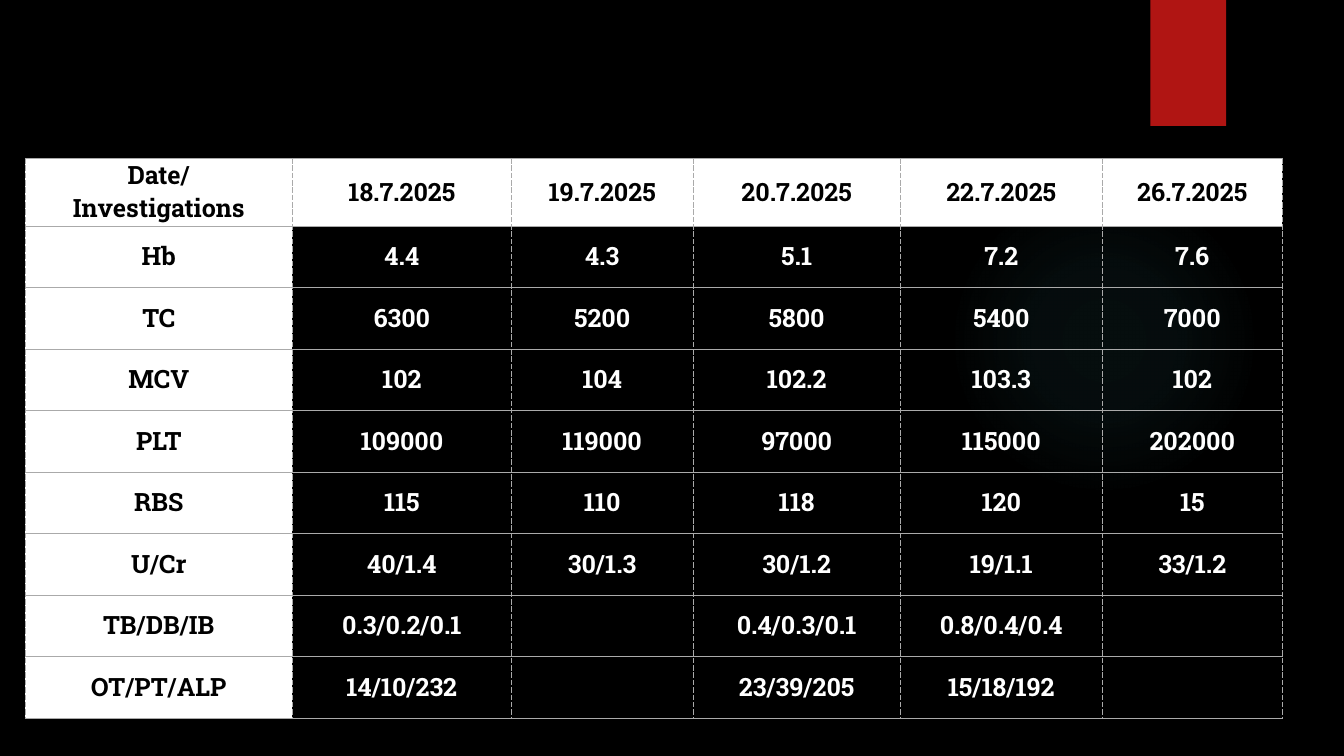
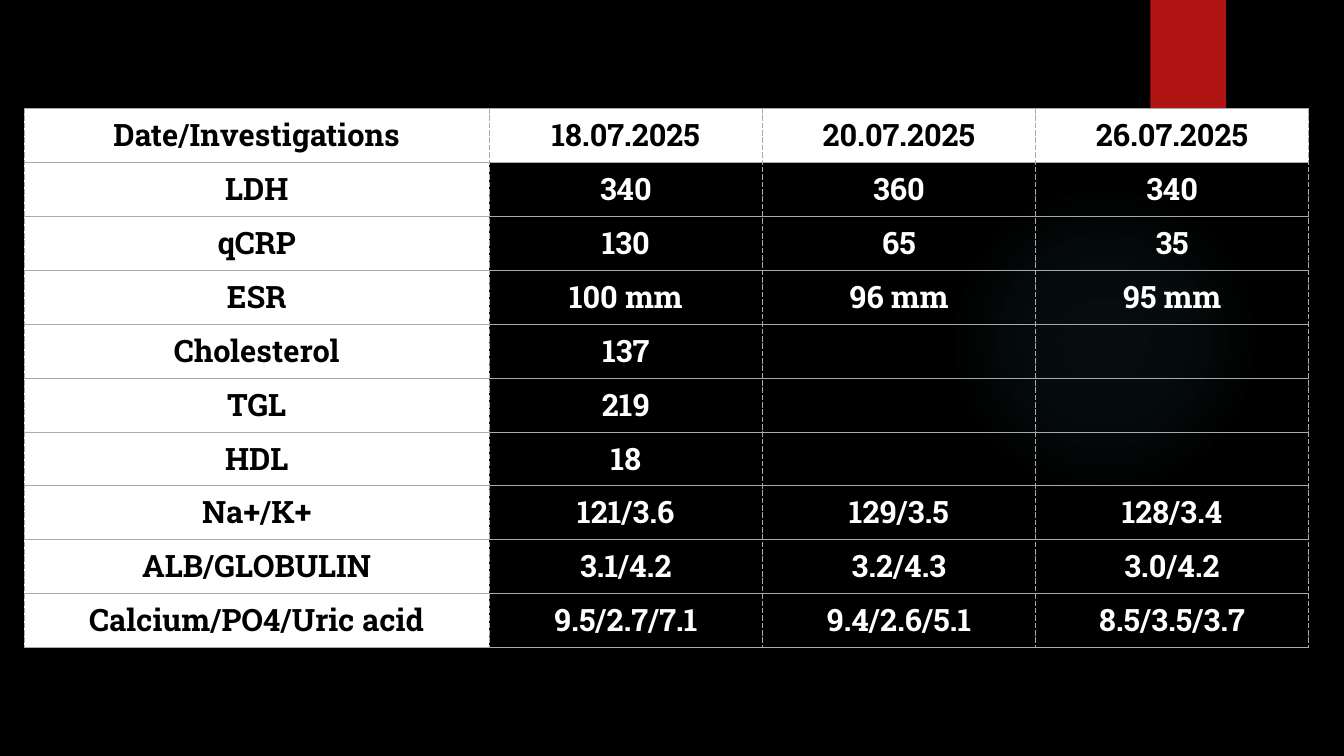
"""Build two slides of dated laboratory investigations."""
from pptx import Presentation
from pptx.dml.color import RGBColor
from pptx.enum.shapes import MSO_SHAPE
from pptx.enum.text import MSO_ANCHOR, PP_ALIGN
from pptx.oxml import parse_xml
from pptx.oxml.ns import nsdecls, qn
from pptx.util import Inches, Pt

FONT = "Roboto Slab"
BLACK, WHITE, RED, TEAL, GREY = "000000", "FFFFFF", "B01513", "50B9C1", "AAAAAA"
GLOW_STOPS = [(0, 7), (36, 6), (69, 0)]
BORDERS = [("lnL", "dash"), ("lnR", "dash"), ("lnT", "solid"), ("lnB", "solid")]

INVESTIGATIONS = [
    {
        "place": (0.5, 3.14),
        "size": 36,
        "columns": [5.3, 4.35, 3.6, 4.12, 4, 3.58],
        "heights": [1.24] + [1.22] * 8,
        "rows": [
            ["Date/\nInvestigations", "18.7.2025", "19.7.2025", "20.7.2025", "22.7.2025", "26.7.2025"],
            ["Hb", "4.4", "4.3", "5.1", "7.2", "7.6"],
            ["TC", "6300", "5200", "5800", "5400", "7000"],
            ["MCV", "102", "104", "102.2", "103.3", "102"],
            ["PLT", "109000", "119000", "97000", "115000", "202000"],
            ["RBS", "115", "110", "118", "120", "15"],
            ["U/Cr", "40/1.4", "30/1.3", "30/1.2", "19/1.1", "33/1.2"],
            ["TB/DB/IB", "0.3/0.2/0.1", "", "0.4/0.3/0.1", "0.8/0.4/0.4", ""],
            ["OT/PT/ALP", "14/10/232", "", "23/39/205", "15/18/192", ""],
        ],
    },
    {
        "place": (0.48, 2.15),
        "size": 44,
        "columns": [9.23] + [5.42] * 3,
        "heights": [1.07] * 10,
        "rows": [
            ["Date/Investigations", "18.07.2025", "20.07.2025", "26.07.2025"],
            ["LDH", "340", "360", "340"],
            ["qCRP", "130", "65", "35"],
            ["ESR", "100 mm", "96 mm", "95 mm"],
            ["Cholesterol", "137", "", ""],
            ["TGL", "219", "", ""],
            ["HDL", "18", "", ""],
            ["Na+/K+", "121/3.6", "129/3.5", "128/3.4"],
            ["ALB/GLOBULIN", "3.1/4.2", "3.2/4.3", "3.0/4.2"],
            ["Calcium/PO4/Uric acid", "9.5/2.7/7.1", "9.4/2.6/5.1", "8.5/3.5/3.7"],
        ],
    },
]


def paint(fill, colour):
    fill.solid()
    fill.fore_color.rgb = RGBColor.from_string(colour)


def add_decoration(slide):
    glow = slide.shapes.add_shape(
        MSO_SHAPE.OVAL, Inches(18.83), Inches(3.67), Inches(6.17), Inches(6.17))
    glow.fill.background()
    glow.line.fill.background()
    glow.shadow.inherit = False
    stops = "".join(
        f'<a:gs pos="{position * 1000}"><a:srgbClr val="{TEAL}">'
        f'<a:alpha val="{alpha * 1000}"/></a:srgbClr></a:gs>'
        for position, alpha in GLOW_STOPS)
    glow_properties = glow.element.spPr
    glow_properties.replace(glow_properties.find(qn("a:noFill")), parse_xml(
        f'<a:gradFill {nsdecls("a")}><a:gsLst>{stops}</a:gsLst><a:path path="circle">'
        '<a:fillToRect l="50000" t="50000" r="50000" b="50000"/></a:path></a:gradFill>'))

    ribbon = slide.shapes.add_shape(
        MSO_SHAPE.RECTANGLE, Inches(22.83), 0, Inches(1.5), Inches(2.5))
    paint(ribbon.fill, RED)
    ribbon.line.fill.background()
    ribbon.shadow.inherit = False
    ribbon.element.spPr.find(qn("a:effectLst")).append(parse_xml(
        f'<a:outerShdw {nsdecls("a")} blurRad="{Pt(3)}" dist="{Pt(2)}" dir="5400000" '
        f'rotWithShape="0"><a:srgbClr val="{BLACK}"><a:alpha val="45000"/></a:srgbClr></a:outerShdw>'))


prs = Presentation()
prs.slide_width = Inches(26.67)
prs.slide_height = Inches(15)
paint(prs.slide_master.background.fill, BLACK)

for results in INVESTIGATIONS:
    slide = prs.slides.add_slide(prs.slide_layouts[6])
    add_decoration(slide)
    left, top = results["place"]
    columns, heights, rows = results["columns"], results["heights"], results["rows"]
    table = slide.shapes.add_table(
        len(rows), len(columns), Inches(left), Inches(top),
        Inches(sum(columns)), Inches(sum(heights))).table
    table.first_row = False
    table.horz_banding = False
    for column, width in zip(table.columns, columns):
        column.width = Inches(width)

    for r, values in enumerate(rows):
        table.rows[r].height = Inches(heights[r])
        for c, value in enumerate(values):
            cell = table.cell(r, c)
            is_heading = r == 0 or c == 0
            cell.text = value
            cell.vertical_anchor = MSO_ANCHOR.MIDDLE
            cell.margin_left = cell.margin_right = cell.margin_bottom = Inches(0.03)
            cell.margin_top = 0
            if is_heading:
                paint(cell.fill, WHITE)
            else:
                cell.fill.background()
            for paragraph in cell.text_frame.paragraphs:
                paragraph.alignment = PP_ALIGN.CENTER
                for run in paragraph.runs:
                    run.font.name = FONT
                    run.font.size = Pt(results["size"])
                    run.font.bold = True
                    run.font.color.rgb = RGBColor.from_string(BLACK if is_heading else WHITE)
            cell_properties = cell._tc.get_or_add_tcPr()
            for index, (side, dash) in enumerate(BORDERS):
                cell_properties.insert(index, parse_xml(
                    f'<a:{side} {nsdecls("a")} w="{Pt(1)}"><a:solidFill><a:srgbClr val="{GREY}"/>'
                    f'</a:solidFill><a:prstDash val="{dash}"/></a:{side}>'))

prs.save("out.pptx")
